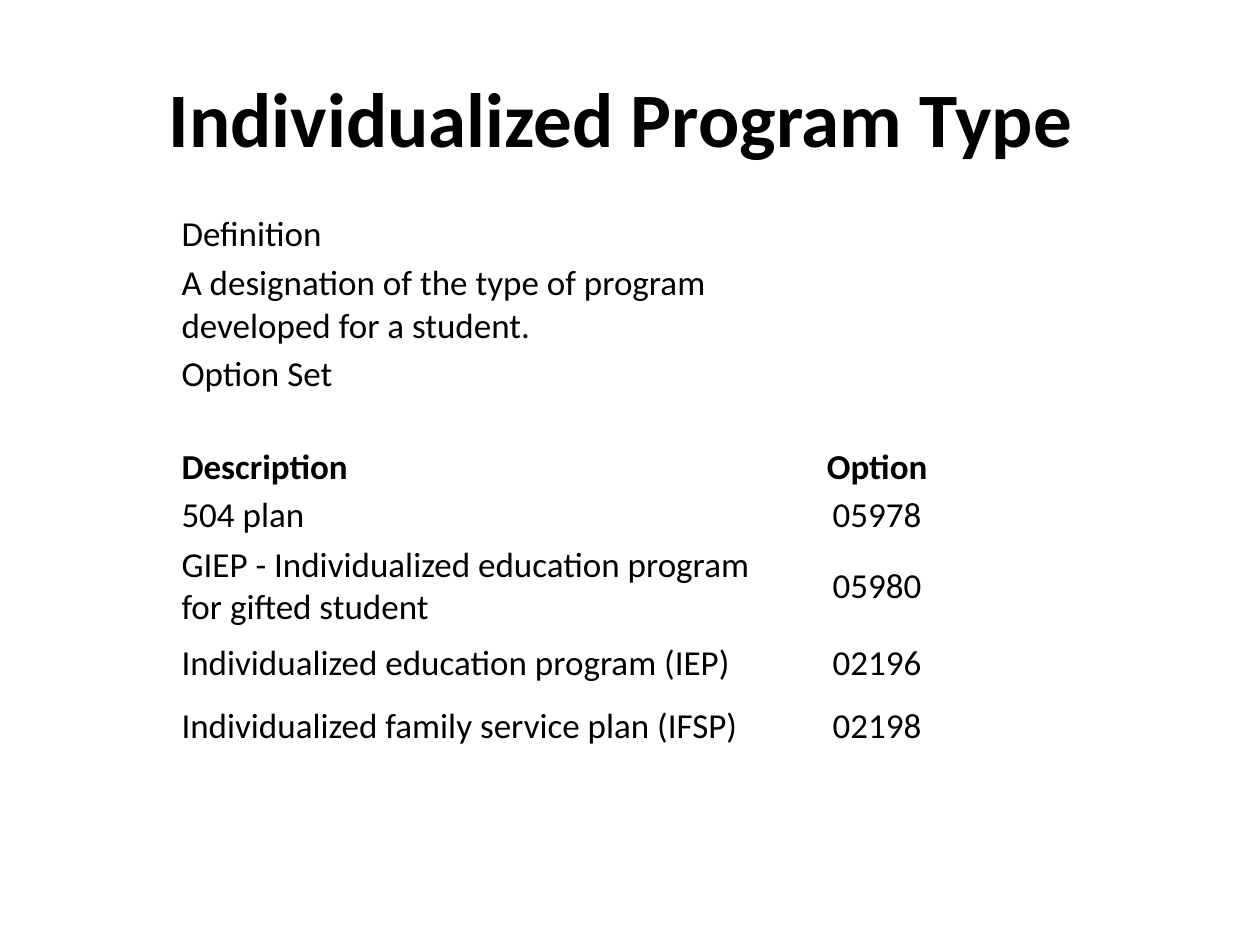
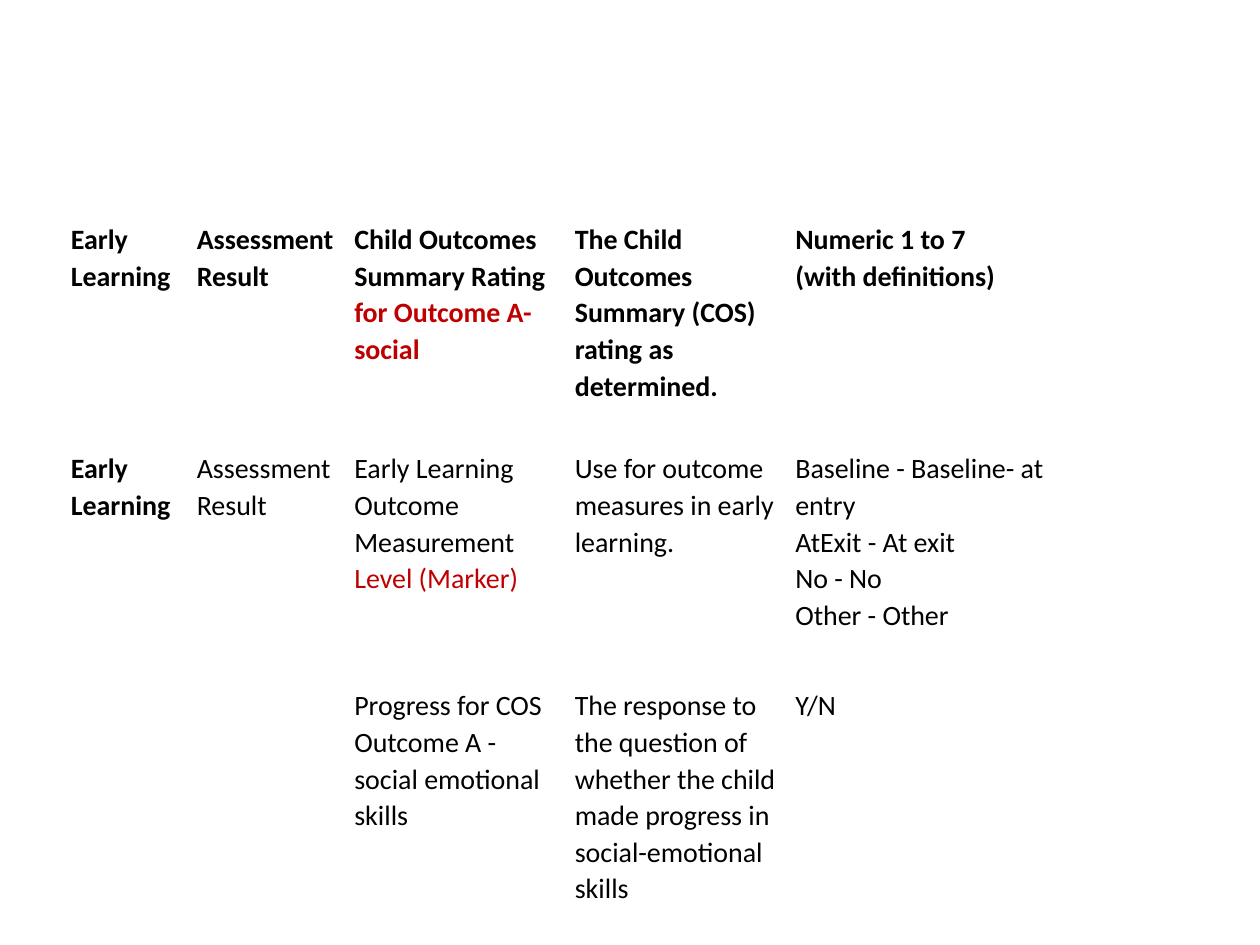
import pptx
import pptx.util
import pptx.dml.color
import pptx.enum.text
import pptx.oxml.ns
import lxml.etree

Pt = pptx.util.Pt
ALIGN = pptx.enum.text.PP_ALIGN
ANCHOR = pptx.enum.text.MSO_ANCHOR

FONT = "Calibri"
BLACK, WHITE, RED = "000000", "FFFFFF", "C00000"

TITLE = "Individualized Program Type "
OPTION_ROWS = [
    ("Definition", ""),
    ("A designation of the type of program developed for a student.", ""),
    ("Option Set", ""),
    ("Description", "Option"),
    ("504 plan", "05978"),
    ("GIEP - Individualized education program for gifted student", "05980"),
    ("Individualized education program (IEP)", "02196"),
    ("Individualized family service plan (IFSP)", "02198"),
]
OPTION_HEADER = 3
OPTION_WIDTHS = [336, 126]
OPTION_HEIGHTS = [28, 52, 28, 52.5, 28, 53, 35.5, 36]

OUTCOME_ROWS = [
    ("Early Learning", "Assessment Result",
     ("Child Outcomes Summary Rating ", "for Outcome A- social"),
     "The Child Outcomes Summary (COS) rating as determined.",
     "Numeric 1 to 7 \n(with definitions)"),
    ("Early Learning", "Assessment Result",
     ("Early Learning Outcome Measurement ", "Level (Marker)"),
     "Use for outcome measures in early learning.",
     "Baseline - Baseline- at entry\nAtExit - At exit\nNo - No\nOther - Other"),
    ("", "", "Progress for COS Outcome A - social emotional skills",
     "The response to the question of whether the child made progress in social-emotional skills",
     "Y/N"),
]
OUTCOME_WIDTHS = [72, 90, 126, 126, 178]
OUTCOME_HEIGHTS = [131, 135.5, 129.5]


def color(value):
    return pptx.dml.color.RGBColor.from_string(value)


def add_run(paragraph, text, size, bold, text_color=BLACK):
    for index, line in enumerate(text.split("\n")):
        if index:
            paragraph.add_line_break()
        run = paragraph.add_run()
        run.text = line
        run.font.name = FONT
        run.font.size = Pt(size)
        run.font.bold = bold
        run.font.color.rgb = color(text_color)


def add_table(slide, left, top, widths, heights):
    frame = slide.shapes.add_table(len(heights), len(widths), Pt(left), Pt(top),
                                   Pt(sum(widths)), Pt(sum(heights)))
    table = frame.table
    table.first_row = table.horz_banding = False
    for column, width in zip(table.columns, widths):
        column.width = Pt(width)
    for row, height in zip(table.rows, heights):
        row.height = Pt(height)
    return table


def set_margins(cell, horizontal, vertical):
    cell.margin_left = cell.margin_right = Pt(horizontal)
    cell.margin_top = cell.margin_bottom = Pt(vertical)


def set_borders(cell, bottom_width):
    properties = cell._tc.get_or_add_tcPr()
    widths = {"a:lnL": 1, "a:lnR": 1, "a:lnT": 1, "a:lnB": bottom_width}
    for index, (tag, width) in enumerate(widths.items()):
        line = lxml.etree.Element(pptx.oxml.ns.qn(tag), w=str(Pt(width)))
        fill = lxml.etree.SubElement(line, pptx.oxml.ns.qn("a:solidFill"))
        lxml.etree.SubElement(fill, pptx.oxml.ns.qn("a:srgbClr"), val=WHITE)
        properties.insert(index, line)


def build_option_slide(slide):
    title = slide.shapes.add_textbox(Pt(36), Pt(21.6), Pt(648), Pt(90))
    title.text_frame.word_wrap = True
    title.text_frame.vertical_anchor = ANCHOR.MIDDLE
    paragraph = title.text_frame.paragraphs[0]
    paragraph.alignment = ALIGN.CENTER
    add_run(paragraph, TITLE, 44, True)

    table = add_table(slide, 102.24, 120.24, OPTION_WIDTHS, OPTION_HEIGHTS)
    for row_index, texts in enumerate(OPTION_ROWS):
        is_header = row_index == OPTION_HEADER
        for column_index, text in enumerate(texts):
            cell = table.cell(row_index, column_index)
            cell.fill.background()
            set_margins(cell, 1.5, 1.5)
            cell.vertical_anchor = ANCHOR.BOTTOM if is_header else ANCHOR.MIDDLE
            if text:
                paragraph = cell.text_frame.paragraphs[0]
                paragraph.alignment = ALIGN.CENTER if column_index else ALIGN.LEFT
                add_run(paragraph, text, 20, is_header)


def build_outcome_slide(slide):
    table = add_table(slide, 36, 126, OUTCOME_WIDTHS, OUTCOME_HEIGHTS)
    for row_index, contents in enumerate(OUTCOME_ROWS):
        for column_index, content in enumerate(contents):
            cell = table.cell(row_index, column_index)
            cell.fill.solid()
            cell.fill.fore_color.rgb = color(WHITE)
            set_margins(cell, 4.5, 0)
            set_borders(cell, 1 if row_index else 3)
            if content:
                parts = (content,) if isinstance(content, str) else content
                paragraph = cell.text_frame.paragraphs[0]
                paragraph.line_spacing = 1.07
                bold = row_index == 0 or column_index == 0
                for text, text_color in zip(parts, (BLACK, RED)):
                    add_run(paragraph, text, 16, bold, text_color)


def main():
    presentation = pptx.Presentation()
    presentation.slide_width = Pt(720)
    presentation.slide_height = Pt(540)
    for build in (build_option_slide, build_outcome_slide):
        build(presentation.slides.add_slide(presentation.slide_layouts[6]))
    presentation.save("out.pptx")


if __name__ == "__main__":
    main()
